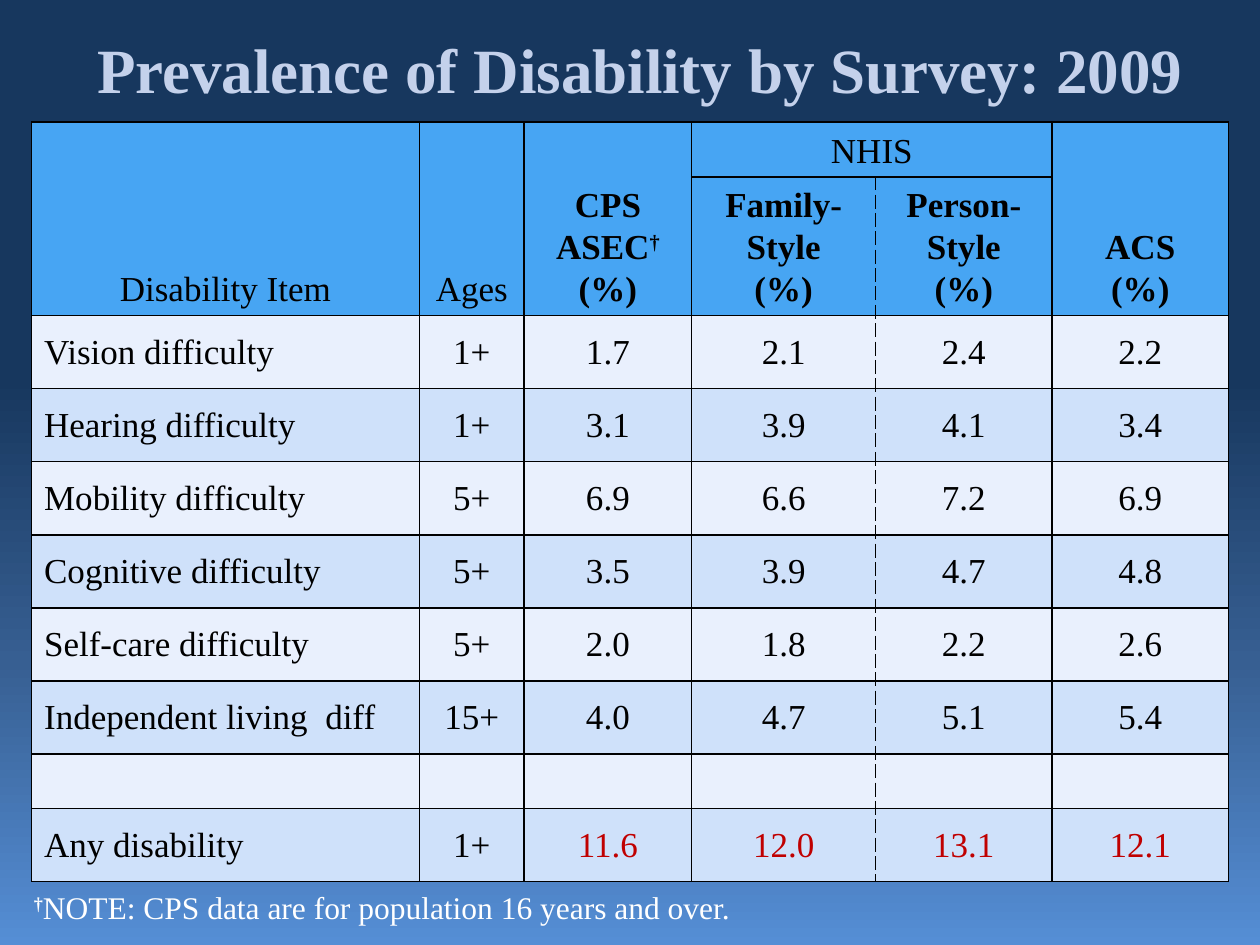
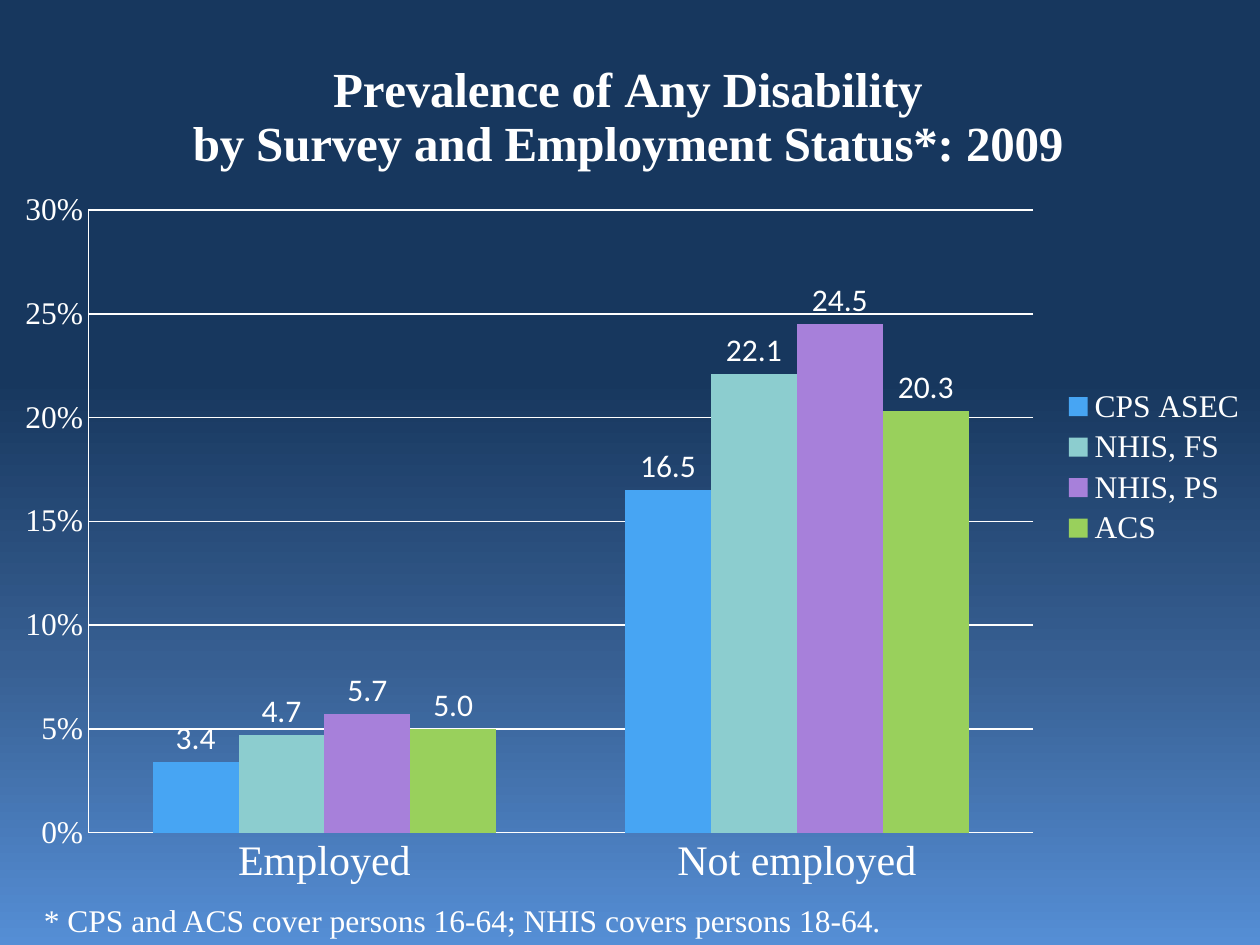
import pptx
import pptx.chart.data
import pptx.dml.color
import pptx.enum.chart
import pptx.enum.text
import pptx.oxml
import pptx.oxml.ns
import pptx.util
from lxml import etree

RGB = pptx.dml.color.RGBColor
ALIGN = pptx.enum.text.PP_ALIGN
ANCHOR = pptx.enum.text.MSO_ANCHOR
Pt = pptx.util.Pt
qn = pptx.oxml.ns.qn

NAVY = RGB(0x17, 0x37, 0x5E)
STEEL = RGB(0x37, 0x5F, 0x92)
SKY = RGB(0x55, 0x8E, 0xD5)
TITLE_BLUE = RGB(0xC4, 0xD1, 0xEB)
WHITE = RGB(0xFF, 0xFF, 0xFF)
BLACK = RGB(0x00, 0x00, 0x00)
RED = RGB(0xC0, 0x00, 0x00)
HEADER_BLUE = RGB(0x47, 0xA5, 0xF3)
BANDS = (RGB(0xE9, 0xF0, 0xFD), RGB(0xCF, 0xE1, 0xFA))
TEAL = RGB(0x8C, 0xCD, 0xCF)
PURPLE = RGB(0xA7, 0x80, 0xDA)
GREEN = RGB(0x99, 0xD0, 0x5C)

SERIF = "Times New Roman"
SANS = "Calibri"
BACKDROP = ((0, NAVY), (40, NAVY), (70, STEEL), (100, SKY))

WIDTH, HEIGHT = pptx.util.Inches(10), pptx.util.Inches(7.5)
GRID_COLS, GRID_ROWS = 40, 30

COL_WIDTHS = (3.08, 0.83, 1.33, 1.46, 1.4, 1.4)
ROW_HEIGHTS = (0.42, 1.06) + (0.58,) * 6 + (0.33, 0.58)
FAMILY, PERSON = 3, 4
HEADINGS = {
    (0, 0): ["Disability Item"],
    (0, 1): ["Ages"],
    (0, FAMILY): ["NHIS"],
    (1, 2): ["CPS ASEC†", "(%)"],
    (1, FAMILY): ["Family- Style", "(%)"],
    (1, PERSON): ["Person-Style", "(%)"],
    (1, 5): ["ACS", "(%)"],
}
DIFFICULTIES = (
    ("Vision difficulty", "1+", "1.7", "2.1", "2.4", "2.2"),
    ("Hearing difficulty", "1+", "3.1", "3.9", "4.1", "3.4"),
    ("Mobility difficulty", "5+", "6.9", "6.6", "7.2", "6.9"),
    ("Cognitive difficulty", "5+", "3.5", "3.9", "4.7", "4.8"),
    ("Self-care difficulty", "5+", "2.0", "1.8", "2.2", "2.6"),
    ("Independent living  diff", "15+", "4.0", "4.7", "5.1", "5.4"),
    ("",) * 6,
    ("Any disability", "1+", "11.6", "12.0", "13.1", "12.1"),
)
SURVEYS = (
    ("CPS ASEC", (0.034, 0.165), HEADER_BLUE),
    ("NHIS, FS", (0.047, 0.221), TEAL),
    ("NHIS, PS", (0.057, 0.245), PURPLE),
    ("ACS", (0.05, 0.203), GREEN),
)


def grid(col, row, cols, rows):
    x, y = WIDTH / GRID_COLS, HEIGHT / GRID_ROWS
    return int(col * x), int(row * y), int(cols * x), int(rows * y)


def style(font, size, color, bold=False, name=SERIF):
    font.size, font.name, font.bold = Pt(size), name, bold
    font.color.rgb = color


def write(p, text):
    for i, part in enumerate(text.partition("†")):
        if part:
            r = p.add_run()
            r.text = part
            if i == 1:
                r.font.bold = True
                r.font._element.set("baseline", "30000")


def add_slide(prs):
    s = prs.slides.add_slide(prs.slide_layouts[6])
    fill = s.background.fill
    fill.gradient()
    fill.gradient_angle = 270
    stops = fill._fill._gradFill.find(qn("a:gsLst"))
    for stop in list(stops):
        stops.remove(stop)
    for share, color in BACKDROP:
        stop = etree.SubElement(stops, qn("a:gs"), pos=str(share * 1000))
        etree.SubElement(stop, qn("a:srgbClr"), val=str(color))
    return s


def add_text(s, box, text, size, color, bold=False, align=ALIGN.LEFT, anchor=ANCHOR.TOP):
    tf = s.shapes.add_textbox(*grid(*box)).text_frame
    tf.word_wrap = True
    tf.vertical_anchor = anchor
    p = tf.paragraphs[0]
    p.alignment = align
    style(p.font, size, color, bold)
    write(p, text)


def set_borders(cell, row, col):
    hidden = {"B" if row == 0 else "T"} if row < 2 and col in (2, 5) else set()
    dashed = {FAMILY: "R", PERSON: "L"}.get(col) if row else None
    tcPr = cell._tc.get_or_add_tcPr()
    for i, side in enumerate("LRTB"):
        ln = etree.Element(qn("a:ln" + side), w=str(Pt(1)))
        if side in hidden:
            etree.SubElement(ln, qn("a:noFill"))
        else:
            fill = etree.SubElement(ln, qn("a:solidFill"))
            etree.SubElement(fill, qn("a:srgbClr"), val=str(BLACK))
            dash = "dash" if side == dashed else "solid"
            etree.SubElement(ln, qn("a:prstDash"), val=dash)
        tcPr.insert(i, ln)


def fill_cell(cell, lines, fill, color=BLACK, bold=False, align=ALIGN.CENTER,
              anchor=ANCHOR.MIDDLE, spacing=None):
    cell.fill.solid()
    cell.fill.fore_color.rgb = fill
    cell.vertical_anchor = anchor
    tf = cell.text_frame
    for i, line in enumerate(lines):
        p = tf.add_paragraph() if i else tf.paragraphs[0]
        p.alignment = align
        p.line_spacing = spacing
        style(p.font, 20, color, bold)
        write(p, line)


def add_survey_table(s, box):
    table = s.shapes.add_table(len(ROW_HEIGHTS), len(COL_WIDTHS), *grid(*box)).table
    table.first_row = table.horz_banding = False
    for column, width in zip(table.columns, COL_WIDTHS):
        column.width = pptx.util.Inches(width)
    for row, height in zip(table.rows, ROW_HEIGHTS):
        row.height = pptx.util.Inches(height)
    for first, last in (((0, 0), (1, 0)), ((0, 1), (1, 1)), ((0, FAMILY), (0, PERSON))):
        table.cell(*first).merge(table.cell(*last))

    for row in range(len(ROW_HEIGHTS)):
        for col in range(len(COL_WIDTHS)):
            cell = table.cell(row, col)
            if row < 2:
                anchor = ANCHOR.MIDDLE if (row, col) == (0, FAMILY) else ANCHOR.BOTTOM
                fill_cell(cell, HEADINGS.get((row, col), [""]), HEADER_BLUE,
                          bold=row == 1, anchor=anchor, spacing=Pt(24))
            else:
                total = row == len(ROW_HEIGHTS) - 1 and col > 1
                fill_cell(cell, [DIFFICULTIES[row - 2][col]], BANDS[row % 2],
                          color=RED if total else BLACK,
                          align=ALIGN.CENTER if col else ALIGN.LEFT)
            set_borders(cell, row, col)


def place(element, index, **shares):
    old = element.find(qn("c:layout"))
    if old is not None:
        element.remove(old)
    layout = etree.Element(qn("c:layout"))
    manual = etree.SubElement(layout, qn("c:manualLayout"))
    if "w" in shares:
        etree.SubElement(manual, qn("c:layoutTarget"), val="inner")
    for key in "xy":
        etree.SubElement(manual, qn(f"c:{key}Mode"), val="edge")
    for key, share in shares.items():
        etree.SubElement(manual, qn("c:" + key), val=str(share))
    element.insert(index, layout)


def style_axis(axis, size):
    axis.major_tick_mark = axis.minor_tick_mark = pptx.enum.chart.XL_TICK_MARK.NONE
    style(axis.tick_labels.font, size, WHITE)
    axis.format.line.color.rgb = WHITE


def add_survey_chart(s, box):
    data = pptx.chart.data.CategoryChartData(number_format="0.0%")
    data.categories = ["Employed", "Not employed"]
    for name, values, _ in SURVEYS:
        data.add_series(name, values)
    kind = pptx.enum.chart.XL_CHART_TYPE.COLUMN_CLUSTERED
    chart = s.shapes.add_chart(kind, *grid(*box), data).chart
    style(chart.font, 18, WHITE, name=SANS)

    tf = chart.chart_title.text_frame
    for i, line in enumerate(("Prevalence of Any Disability",
                              "by Survey and Employment Status*: 2009")):
        p = tf.add_paragraph() if i else tf.paragraphs[0]
        style(p.font, 28, WHITE, True)
        write(p, line)
    chart.chart_title.include_in_layout = False
    place(chart.chart_title._element, 1, x=0.15, y=0.03)
    place(chart._chartSpace.chart.plotArea, 0, x=0.07, y=0.205, w=0.75, h=0.714)

    style_axis(chart.category_axis, 24)
    axis = chart.value_axis
    style_axis(axis, 18)
    axis.minimum_scale, axis.maximum_scale, axis.major_unit = 0, 0.3, 0.05
    axis.tick_labels.number_format = "0%"
    axis.tick_labels.number_format_is_linked = False
    axis.major_gridlines.format.line.color.rgb = WHITE

    chart.has_legend = True
    chart.legend.position = pptx.enum.chart.XL_LEGEND_POSITION.RIGHT
    chart.legend.include_in_layout = False
    style(chart.legend.font, 18, WHITE)

    plot = chart.plots[0]
    plot.gap_width, plot.overlap = 150, 0
    plot.vary_by_categories = False
    for series, (_, values, color) in zip(plot.series, SURVEYS):
        series.format.fill.solid()
        series.format.fill.fore_color.rgb = color
        series.data_labels.show_value = True
        series.data_labels.number_format = "0.0%"
        series.data_labels.number_format_is_linked = False
        for i, value in enumerate(values):
            label = series.points[i].data_label
            p = label.text_frame.paragraphs[0]
            style(p.font, 18, WHITE, name=SANS)
            write(p, f"{value * 100:.1f}")
            label.position = pptx.enum.chart.XL_LABEL_POSITION.OUTSIDE_END


def main():
    prs = pptx.Presentation()
    prs.slide_width, prs.slide_height = WIDTH, HEIGHT

    s = add_slide(prs)
    add_text(s, (2.32, 0.68, 36, 3), "Prevalence of Disability by Survey: 2009",
             36, TITLE_BLUE, True, ALIGN.CENTER, ANCHOR.MIDDLE)
    add_survey_table(s, (1, 3.88, 38, 24.12))
    add_text(s, (0.68, 28, 30, 1.6),
             "†NOTE: CPS data are for population 16 years and over.", 18, WHITE)

    s = add_slide(prs)
    add_survey_chart(s, (0, 1, 40, 27.68))
    add_text(s, (1, 28.4, 37.68, 1.6),
             "* CPS and ACS cover persons 16-64; NHIS covers persons 18-64.", 18, WHITE)

    prs.save("out.pptx")


if __name__ == "__main__":
    main()
